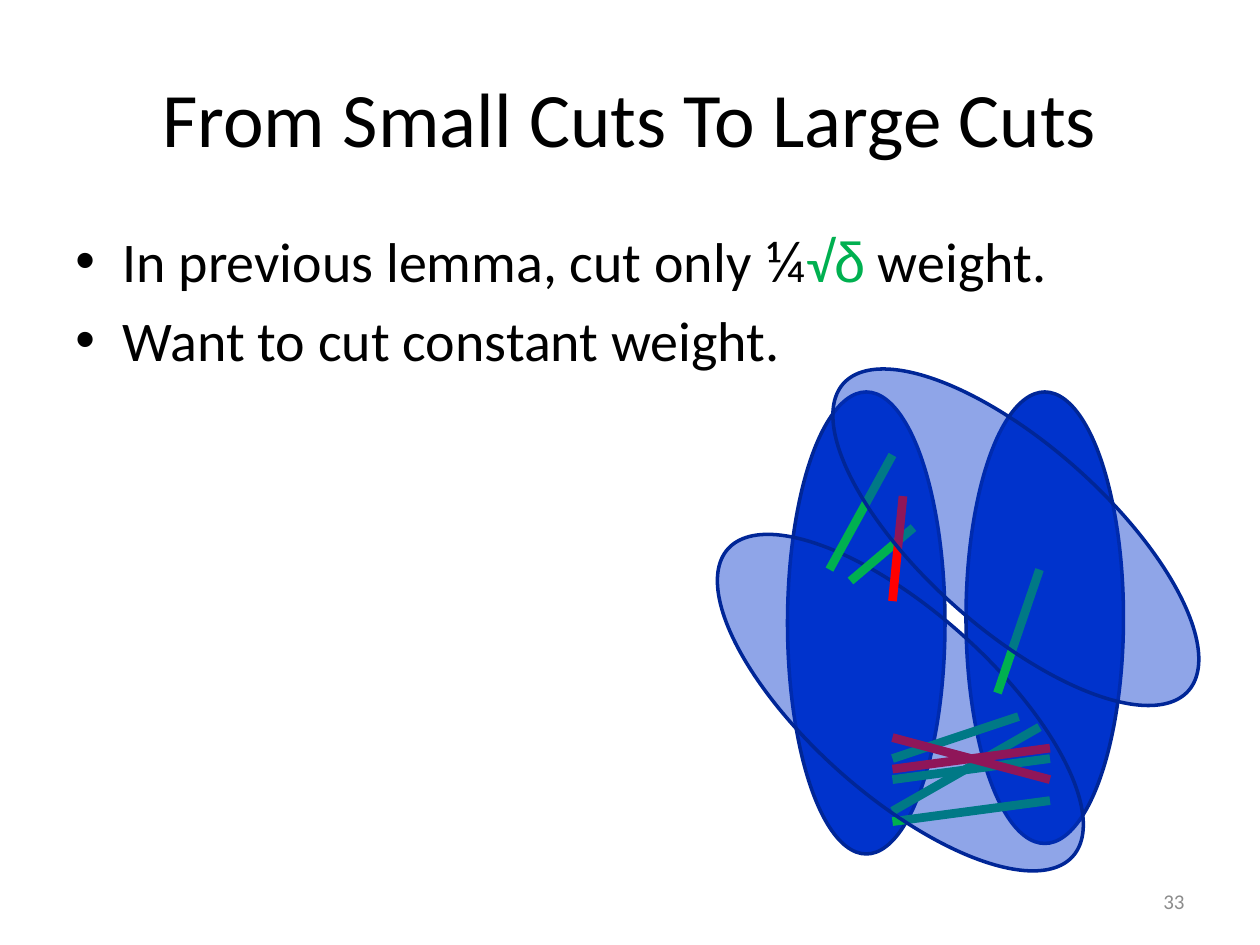
from dataclasses import dataclass
from typing import Optional

from lxml.etree import SubElement as Sub
from pptx import Presentation
from pptx.dml.color import RGBColor as Rgb
from pptx.enum.shapes import MSO_CONNECTOR as Link, MSO_SHAPE as Form
from pptx.enum.text import MSO_ANCHOR as Anchor, PP_ALIGN as Align
from pptx.oxml.ns import qn
from pptx.util import Pt

BLUE, EDGE = "0033CC", "002697"
GREEN, RED = "00B050", "FF0000"
BLACK, GREY = "000000", "8C8C8C"


@dataclass
class Oval:
    x: float
    y: float
    w: float
    h: float
    turn: float = 0
    alpha: Optional[int] = None


@dataclass
class Line:
    x1: float
    y1: float
    x2: float
    y2: float
    color: str = GREEN


@dataclass
class Part:
    text: str
    font: str = "Calibri"
    color: str = BLACK


@dataclass
class Box:
    x: float
    y: float
    w: float
    h: float
    size: float
    rows: list[list[Part]]
    align: Align = Align.LEFT
    anchor: Anchor = Anchor.MIDDLE
    bullet: bool = False


LEFT, RIGHT = 510, 600

GRAPH = [
    Oval(552, 224, 90, 258),
    Oval(450, 224, 90, 264),
    Line(LEFT, 433.5, 582, 409.5),
    Line(LEFT, 445.5, RIGHT, 433.5),
    Line(LEFT, 463.5, 594, 415.5),
    Line(LEFT, 469.5, RIGHT, 457.5),
    Line(LEFT, 439.5, RIGHT, 427.5, RED),
    Line(LEFT, 421.5, RIGHT, 445.5, RED),
    Oval(462, 269.5, 105, 264, 311.7, 44),
    Line(570, 396, 594, 325.5),
    Line(486, 332, 522, 301.5),
    Line(474, 325.5, LEFT, 260),
    Line(516, 283.5, LEFT, 343.5, RED),
    Oval(528, 175, 105, 264, 311.7, 44),
]

TITLE = Box(36, 21.6, 648, 90, 44, [[Part("From Small Cuts To Large Cuts")]], Align.CENTER)
BODY = Box(
    36, 126, 648, 356.4, 32,
    [
        [
            Part("In previous lemma, cut only "),
            Part("¼", "Lato"),
            Part("√", color=GREEN),
            Part("δ", "Arial", GREEN),
            Part(" weight."),
        ],
        [Part("Want to cut constant weight.")],
    ],
    anchor=Anchor.TOP,
    bullet=True,
)
PAGE = Box(516, 500.5, 168, 28.8, 12, [[Part("33", color=GREY)]], Align.RIGHT)


def paint(target, color: str) -> None:
    target.rgb = Rgb.from_string(color)


def draw_oval(slide, oval: Oval) -> None:
    shape = slide.shapes.add_shape(Form.OVAL, Pt(oval.x), Pt(oval.y), Pt(oval.w), Pt(oval.h))
    shape.rotation = oval.turn
    shape.shadow.inherit = False
    shape.fill.solid()
    paint(shape.fill.fore_color, BLUE)
    paint(shape.line.color, EDGE)
    shape.line.width = Pt(2)
    if oval.alpha is not None:
        tint = shape.fill._xPr.find(qn("a:solidFill"))[0]
        Sub(tint, qn("a:alpha"), val=str(oval.alpha * 1000))


def draw_line(slide, line: Line) -> None:
    link = slide.shapes.add_connector(
        Link.STRAIGHT, Pt(line.x1), Pt(line.y1), Pt(line.x2), Pt(line.y2)
    )
    paint(link.line.color, line.color)
    link.line.width = Pt(5)
    Sub(link._element.spPr, qn("a:effectLst"))


def add_bullet(para) -> None:
    para.space_before = Pt(6.4)
    props = para._p.get_or_add_pPr()
    props.set("marL", str(Pt(27)))
    props.set("indent", str(Pt(-27)))
    Sub(props, qn("a:buFont"), typeface="Arial")
    Sub(props, qn("a:buChar"), char="•")


def draw_text(slide, box: Box) -> None:
    shape = slide.shapes.add_textbox(Pt(box.x), Pt(box.y), Pt(box.w), Pt(box.h))
    frame = shape.text_frame
    frame.word_wrap = True
    frame.vertical_anchor = box.anchor
    for i, row in enumerate(box.rows):
        para = frame.add_paragraph() if i else frame.paragraphs[0]
        para.alignment = box.align
        if box.bullet:
            add_bullet(para)
        for part in row:
            run = para.add_run()
            run.text = part.text
            run.font.name = part.font
            run.font.size = Pt(box.size)
            paint(run.font.color, part.color)


def main() -> None:
    deck = Presentation()
    deck.slide_width, deck.slide_height = Pt(720), Pt(540)
    slide = deck.slides.add_slide(deck.slide_layouts[6])
    draw_text(slide, TITLE)
    draw_text(slide, BODY)
    for item in GRAPH:
        if isinstance(item, Oval):
            draw_oval(slide, item)
        else:
            draw_line(slide, item)
    draw_text(slide, PAGE)
    deck.save("out.pptx")


if __name__ == "__main__":
    main()
